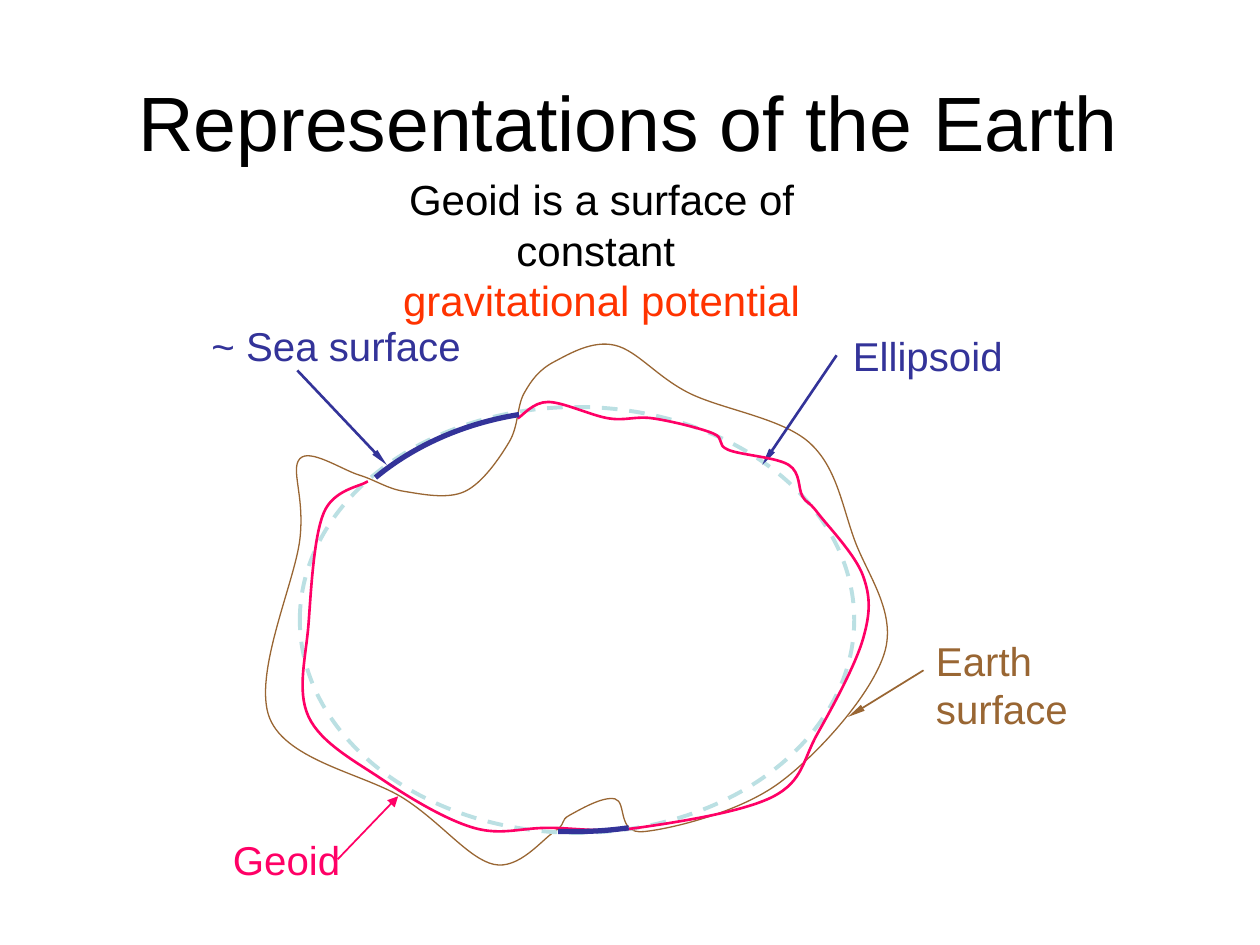
from copy import deepcopy
from lxml.etree import SubElement
from pptx import Presentation
from pptx.dml.color import RGBColor
from pptx.enum.dml import MSO_LINE_DASH_STYLE as DASH
from pptx.enum.shapes import MSO_CONNECTOR as CONN, MSO_SHAPE as SHAPE
from pptx.enum.text import MSO_ANCHOR as ANCHOR, PP_ALIGN as ALIGN
from pptx.oxml.ns import qn
from pptx.util import Inches, Pt

BLACK = RGBColor(0x00, 0x00, 0x00)
BROWN = RGBColor(0x99, 0x66, 0x33)
NAVY = RGBColor(0x33, 0x33, 0x99)
PINK = RGBColor(0xFF, 0x00, 0x66)
PALE = RGBColor(0xBB, 0xE0, 0xE3)
ORANGE = RGBColor(0xFF, 0x33, 0x00)
FONT = "Arial"

TITLE = "Representations of the Earth"
DEFINITION = [("Geoid is a surface of constant ", BLACK),
              ("gravitational potential", ORANGE)]

EARTH = [(2.85, 3.77), (3.21, 3.9), (3.69, 3.9), (4.04, 3.51), (4.16, 3.12),
         (4.4, 2.87), (4.88, 2.74), (5.47, 3.12), (6.42, 3.51), (6.78, 4.28),
         (7.02, 5.18), (6.19, 6.21), (5.11, 6.6), (4.88, 6.34), (4.52, 6.47),
         (4.4, 6.6), (3.92, 6.86), (3.21, 6.34), (2.14, 5.7), (2.38, 4.28),
         (2.38, 3.64)]
GEOID = [(4.11, 3.32), (4.35, 3.19), (4.83, 3.32), (5.18, 3.32), (5.66, 3.44),
         (5.78, 3.57), (6.26, 3.69), (6.37, 3.94), (6.49, 4.07), (6.85, 4.57),
         (6.85, 5.07), (6.49, 5.82), (6.14, 6.32), (5.06, 6.57), (4.35, 6.57),
         (3.76, 6.57), (3.04, 6.19), (2.45, 5.69), (2.45, 4.94), (2.57, 4.07),
         (2.92, 3.82)]
SEAS = [((2.98, 3.79), [((3.28, 3.54), (3.68, 3.36), (4.12, 3.29))],
         (4.57, 4.94)),
        ((4.99, 6.57), [((4.85, 6.59), (4.7, 6.6), (4.56, 6.6)),
                        ((4.51, 6.6), (4.47, 6.6), (4.43, 6.6))],
         (4.56, 4.92))]
ELLIPSOID = (2.38, 3.23, 4.4, 3.38)

SLIM = {"w": "sm", "len": "lg"}
ARROWS = [((2.36, 2.94), (3.07, 3.69), NAVY, 1.5, SLIM),
          ((6.64, 2.82), (6.05, 3.69), NAVY, 1.5, SLIM),
          ((7.33, 5.32), (6.73, 5.69), BROWN, 1, SLIM),
          ((2.68, 6.82), (3.16, 6.32), PINK, 1, {})]
LABELS = [("Earth surface", (7.33, 5, 1.4, 0.86), BROWN),
          ("Ellipsoid", (6.67, 2.58, 1.45, 0.48), NAVY),
          ("~ Sea surface", (1.58, 2.5, 2.2, 0.48), NAVY),
          ("Geoid", (1.75, 6.58, 1.15, 0.48), PINK)]

UNITS = 1000


def smooth_segments(knots, closed=False):
    n = len(knots)

    def knot(i):
        return knots[i % n] if closed else knots[min(max(i, 0), n - 1)]

    def handle(i, sign):
        return tuple(b + sign * (c - a) / 6
                     for a, b, c in zip(knot(i - 1), knot(i), knot(i + 1)))

    return [(handle(i, 1), handle(i + 1, -1), knot(i + 1))
            for i in range(n if closed else n - 1)]


def style_line(line, color, width):
    line.color.rgb = color
    line.width = Pt(width)


def add_curve(shapes, start, segments, color, width, closed=False, center=None):
    knots = [start] + [segment[-1] for segment in segments]
    if center:
        knots.append(center)
    left, top = (min(values) for values in zip(*knots))
    scaled = [(x * UNITS, y * UNITS) for x, y in knots]
    fb = shapes.build_freeform(*scaled[0], scale=Inches(1) / UNITS)
    fb.add_line_segments(scaled[1:], close=closed or bool(center))
    s = fb.convert_to_shape()
    s.shadow.inherit = False
    s.fill.background()
    style_line(s.line, color, width)

    path = next(s._element.iter(qn("a:path")))
    for line, segment in zip(path.findall(qn("a:lnTo")), segments):
        bezier = SubElement(path, qn("a:cubicBezTo"))
        for x, y in segment:
            SubElement(bezier, qn("a:pt"), x=str(round((x - left) * UNITS)),
                       y=str(round((y - top) * UNITS)))
        path.replace(line, bezier)
    if center:
        sector = deepcopy(path)
        sector.set("stroke", "0")
        path.addnext(sector)
        path.set("fill", "none")
        for tag in ("a:lnTo", "a:close"):
            path.remove(path.find(qn(tag)))


def add_arrow(shapes, start, end, color, width, head):
    c = shapes.add_connector(CONN.STRAIGHT, *map(Inches, start + end))
    style_line(c.line, color, width)
    SubElement(c.line._get_or_add_ln(), qn("a:tailEnd"), type="triangle", **head)
    SubElement(c._element.spPr, qn("a:effectLst"))


def write(tf, lines, size, align):
    tf.word_wrap = True
    tf.text = "\n".join(text for text, _ in lines)
    for p, (_, color) in zip(tf.paragraphs, lines):
        p.alignment = align
        font = p.runs[0].font
        font.name, font.size = FONT, Pt(size)
        font.color.rgb = color


def add_text(shapes, lines, box, size, align=ALIGN.LEFT):
    sp = shapes.add_textbox(*map(Inches, box))
    write(sp.text_frame, lines, size, align)


def main():
    prs = Presentation()
    prs.slide_width, prs.slide_height = Inches(10), Inches(7.5)
    shapes = prs.slides.add_slide(prs.slide_layouts[5]).shapes

    title = shapes.title
    title.left, title.top, title.width, title.height = map(
        Inches, (0.74, 0.33, 8.5, 1.25))
    write(title.text_frame, [(TITLE, BLACK)], 44, ALIGN.CENTER)
    title.text_frame.vertical_anchor = ANCHOR.MIDDLE

    add_curve(shapes, EARTH[0], smooth_segments(EARTH, closed=True),
              BROWN, 0.75, closed=True)
    s = shapes.add_shape(SHAPE.OVAL, *map(Inches, ELLIPSOID))
    s.shadow.inherit = False
    s.fill.background()
    style_line(s.line, PALE, 2.25)
    s.line.dash_style = DASH.DASH

    for arrow in ARROWS:
        add_arrow(shapes, *arrow)
    add_curve(shapes, GEOID[0], smooth_segments(GEOID), PINK, 1.5)
    for start, segments, center in SEAS:
        add_curve(shapes, start, segments, NAVY, 3, center=center)
    for text, box, color in LABELS:
        add_text(shapes, [(text, color)], box, 23)
    add_text(shapes, DEFINITION, (2.64, 1.33, 4.27, 0.91), 24, ALIGN.CENTER)

    prs.save("out.pptx")


if __name__ == "__main__":
    main()
